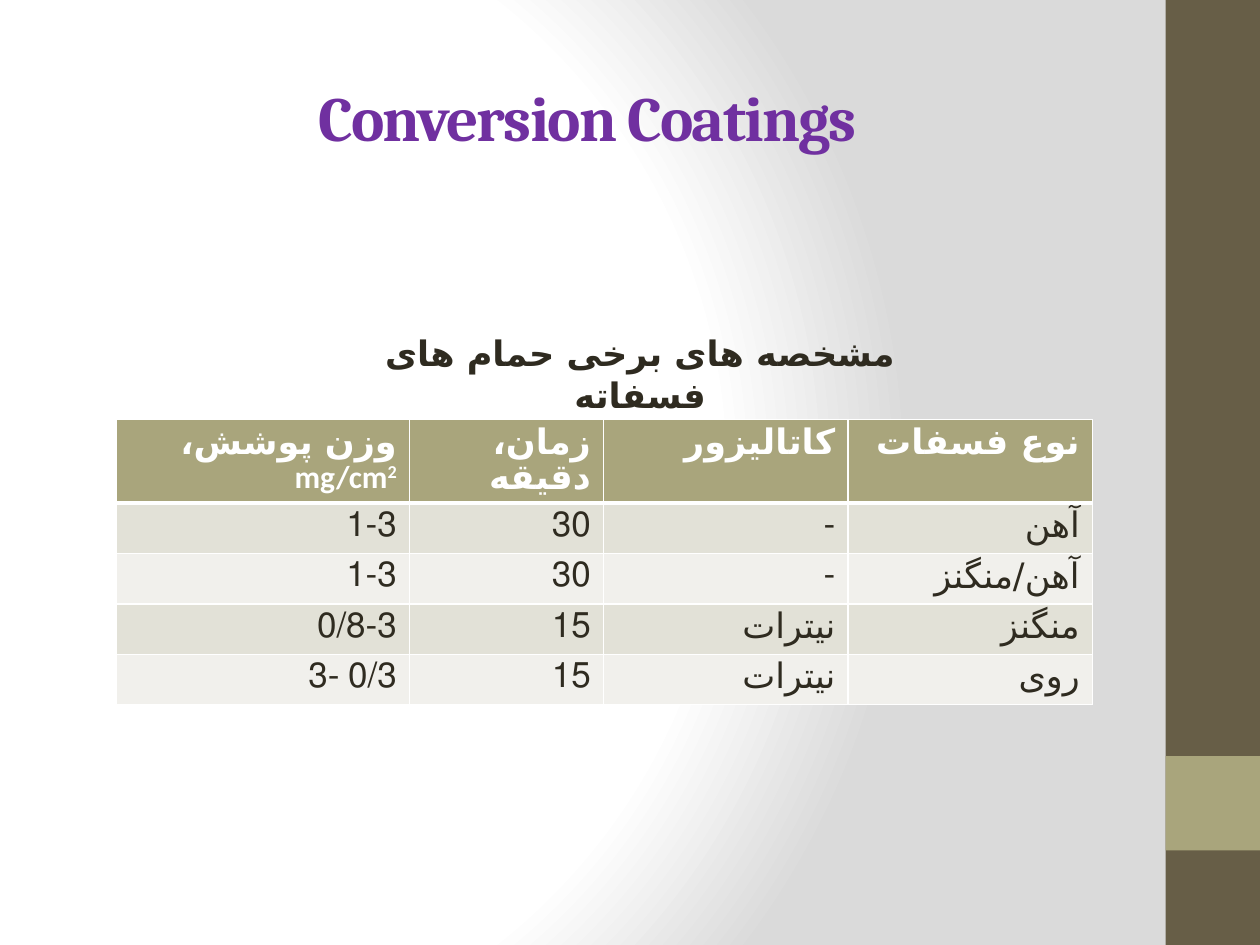
"""Build a slide with a table of phosphate bath characteristics."""
from lxml import etree
from pptx import Presentation, util as u
from pptx.dml.color import RGBColor
from pptx.enum import shapes, text
from pptx.oxml import ns, parse_xml

WHITE = RGBColor(0xFF, 0xFF, 0xFF)
GREY = RGBColor(0xDA, 0xDA, 0xDA)
BROWN = RGBColor(0x67, 0x5E, 0x47)
OLIVE = RGBColor(0xA9, 0xA5, 0x7C)
BANDS = [RGBColor(0xE2, 0xE1, 0xD7), RGBColor(0xF1, 0xF0, 0xEC)]
INK = RGBColor(0x2F, 0x2B, 0x20)
PURPLE = RGBColor(0x70, 0x30, 0xA0)

PERSIAN_FONT = "DejaVu Sans"
COLUMNS = [2.33, 1.54, 1.94, 1.94]
ROW_HEIGHT = 0.4
UNIT = "mg/cm"
HEADER = ["وزن پوشش، ", "زمان، دقیقه", "کاتالیزور", "نوع فسفات"]
BATHS = [
    ["1-3", "30", "-", "آهن"],
    ["1-3", "30", "-", "آهن/منگنز"],
    ["0/8-3", "15", "نیترات", "منگنز"],
    ["0/3 -3", "15", "نیترات", "روی"],
]


def inches(*lengths):
    return [u.Inches(n) for n in lengths]


def is_persian(words):
    return any("\u0600" <= letter <= "ۿ" for letter in words)


def add_run(p, words, color, size=20, bold=False, font="Calibri"):
    r = p.add_run()
    r.text = words
    r.font.name, r.font.size, r.font.bold = font, u.Pt(size), bold
    r.font.color.rgb = color
    if is_persian(words):
        etree.SubElement(r.font._element, ns.qn("a:cs"),
                         typeface=PERSIAN_FONT)
    return r


def set_rtl(p, align):
    p.alignment = align
    p._p.get_or_add_pPr().set("rtl", "1")


def set_background(s):
    s.background.fill.gradient()
    grad = s.element.find(".//" + ns.qn("a:gradFill"))
    for child in list(grad):
        grad.remove(child)
    stops = etree.SubElement(grad, ns.qn("a:gsLst"))
    for share, color in [(0, WHITE), (75, WHITE), (100, GREY)]:
        stop = etree.SubElement(stops, ns.qn("a:gs"), pos=str(share * 1000))
        etree.SubElement(stop, ns.qn("a:srgbClr"), val=str(color))
    circle = etree.SubElement(grad, ns.qn("a:path"), path="circle")
    etree.SubElement(circle, ns.qn("a:fillToRect"),
                     l="20000", t="50000", r="100000", b="50000")


def add_block(s, box, color):
    sp = s.shapes.add_shape(shapes.MSO_SHAPE.RECTANGLE, *inches(*box))
    sp.shadow.inherit = False
    sp.fill.solid()
    sp.fill.fore_color.rgb = color
    sp.line.fill.background()


def set_title(s, box, words):
    sp = s.shapes.title
    sp.left, sp.top, sp.width, sp.height = inches(*box)
    tf = sp.text_frame
    tf.vertical_anchor = text.MSO_ANCHOR.MIDDLE
    p = tf.paragraphs[0]
    set_rtl(p, text.PP_ALIGN.CENTER)
    r = add_run(p, words, PURPLE, 36, True, "Cambria")
    r.font._element.set("spc", "-100")


def add_caption(s, box, words):
    tf = s.shapes.add_textbox(*inches(*box)).text_frame
    tf.word_wrap = True
    tf.auto_size = text.MSO_AUTO_SIZE.SHAPE_TO_FIT_TEXT
    p = tf.paragraphs[0]
    set_rtl(p, text.PP_ALIGN.CENTER)
    add_run(p, words, INK, bold=True)


def set_borders(cell, top, bottom):
    tc_pr = cell._tc.get_or_add_tcPr()
    for i, (side, width) in enumerate(zip("LRTB", (1, 1, top, bottom))):
        tc_pr.insert(i, parse_xml(
            f'<a:ln{side} {ns.nsdecls("a")} w="{u.Pt(width)}"><a:solidFill>'
            f'<a:srgbClr val="{WHITE}"/></a:solidFill></a:ln{side}>'))


def add_bath_table(s, left, top):
    rows = [HEADER] + BATHS
    size = sum(COLUMNS), ROW_HEIGHT * len(rows)
    frame = s.shapes.add_table(len(rows), len(COLUMNS),
                               *inches(left, top, *size))
    table = frame.table
    for column, width in zip(table.columns, COLUMNS):
        column.width = u.Inches(width)
    for i, row in enumerate(rows):
        head = i == 0
        for j, words in enumerate(row):
            cell = table.cell(i, j)
            cell.fill.solid()
            cell.fill.fore_color.rgb = OLIVE if head else BANDS[(i - 1) % 2]
            set_borders(cell, 3 if i == 1 else 1, 3 if head else 1)
            p = cell.text_frame.paragraphs[0]
            p.line_spacing = 0.87 if is_persian(words) else 0.96
            set_rtl(p, text.PP_ALIGN.RIGHT)
            add_run(p, words, WHITE if head else INK, bold=head)
    p = table.cell(0, 0).text_frame.paragraphs[0]
    add_run(p, UNIT, WHITE, 18, True)
    r = add_run(p, "2", WHITE, 18, True)
    r.font._element.set("baseline", "30000")


def main():
    prs = Presentation()
    prs.slide_width, prs.slide_height = inches(10, 7.5)
    s = prs.slides.add_slide(prs.slide_layouts[5])
    set_background(s)
    add_block(s, (9.25, 0, 0.75, 7.5), BROWN)
    add_block(s, (9.25, 6, 0.75, 0.75), OLIVE)
    set_title(s, (0.5, 0.3, 8.33, 1.25), "Conversion Coatings")
    add_bath_table(s, 0.92, 3.33)
    add_caption(s, (2.83, 2.58, 4.5, 0.44), "مشخصه های برخی حمام های فسفاته")
    prs.save("out.pptx")


if __name__ == "__main__":
    main()
